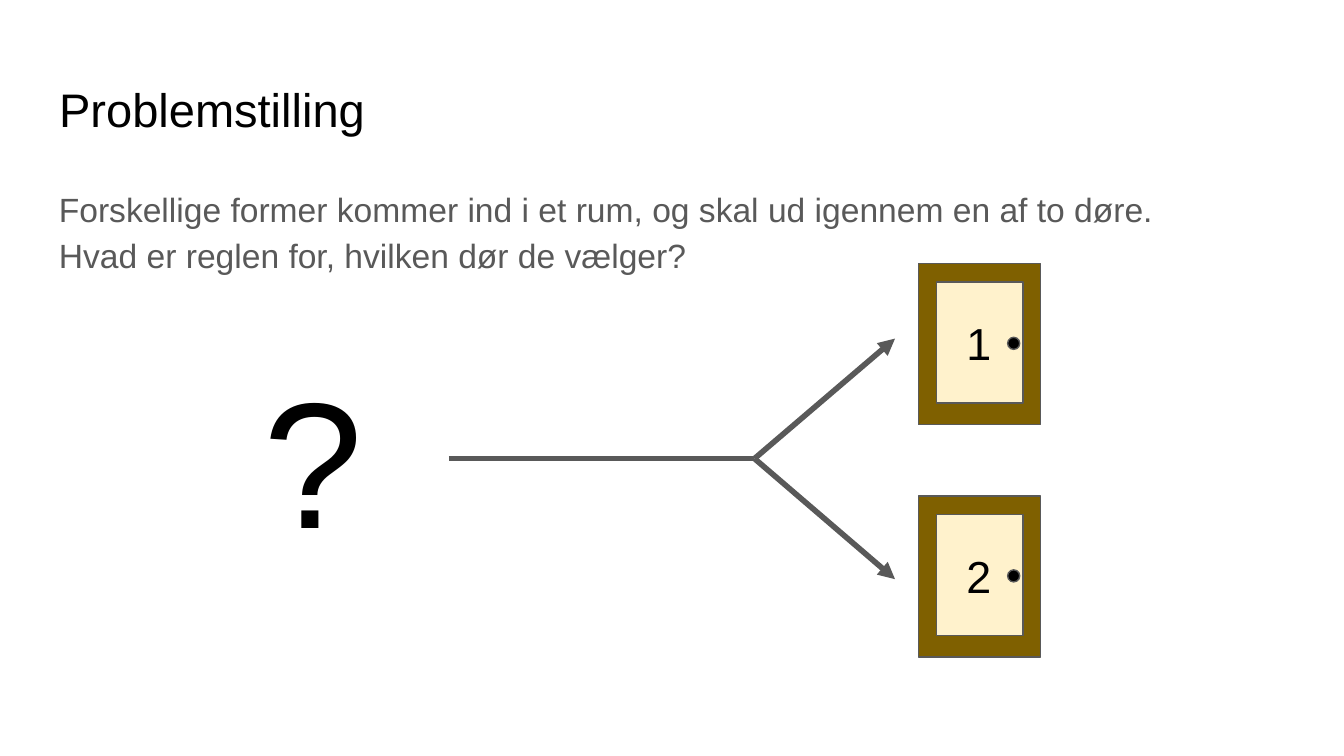
"""Build the problem slide: an unknown shape chooses between two doors."""
from lxml import etree
from pptx import Presentation
from pptx.dml.color import RGBColor
from pptx.enum.shapes import MSO_CONNECTOR, MSO_SHAPE
from pptx.enum.text import MSO_ANCHOR, MSO_AUTO_SIZE
from pptx.oxml.ns import qn
from pptx.util import Pt

STRAIGHT = MSO_CONNECTOR.STRAIGHT
RECTANGLE, OVAL = MSO_SHAPE.RECTANGLE, MSO_SHAPE.OVAL
TOP, BOTTOM = MSO_ANCHOR.TOP, MSO_ANCHOR.BOTTOM
NO_AUTOSIZE = MSO_AUTO_SIZE.NONE

BLACK = RGBColor(0x00, 0x00, 0x00)
GREY = RGBColor(0x59, 0x59, 0x59)
BROWN = RGBColor(0x7F, 0x60, 0x00)
CREAM = RGBColor(0xFF, 0xF2, 0xCC)

INSET = Pt(7.2)
DOOR_LEFT, DOOR_TOP, DOOR_PITCH = 491.9, 141.1, 124.6
FORK = (404.2, 245.7)
PATHS = [
    ((240.5, 245.7), FORK, False),
    (FORK, (479.5, 181.4), True),
    (FORK, (479.5, 310.3), True),
]
BODY_LINES = [
    "Forskellige former kommer ind i et rum, og skal ud igennem en af to døre.",
    "Hvad er reglen for, hvilken dør de vælger?",
]


def points(*lengths):
    return [Pt(length) for length in lengths]


def set_attributes(target, values):
    for name, value in values.items():
        setattr(target, name, value)


def write_text(shape, lines, size, color, anchor=TOP):
    frame = shape.text_frame
    set_attributes(frame, {
        "word_wrap": True, "auto_size": NO_AUTOSIZE, "vertical_anchor": anchor,
        "margin_left": INSET, "margin_top": INSET,
        "margin_right": INSET, "margin_bottom": INSET,
    })
    paragraph = frame.paragraphs[0]
    for index, line in enumerate(lines):
        if index:
            paragraph.add_line_break()
        run = paragraph.add_run()
        run.text = line
        set_attributes(run.font, {"name": "Arial", "size": Pt(size)})
        run.font.color.rgb = color
    return paragraph


def add_title(slide, text):
    title = slide.shapes.title
    left, top, width, height = points(24.5, 35.3, 671, 45.1)
    set_attributes(title, {"left": left, "top": top, "width": width, "height": height})
    paragraph = write_text(title, [text], 25.2, BLACK, BOTTOM)
    set_attributes(paragraph, {"alignment": 1, "line_spacing": 1.0, "space_before": Pt(0)})


def add_text(shapes, box, lines, size, color):
    return write_text(shapes.add_textbox(*points(*box)), lines, size, color)


def add_filled_shape(shapes, kind, box, color):
    shape = shapes.add_shape(kind, *points(*box))
    shape.shadow.inherit = False
    shape.fill.solid()
    shape.fill.fore_color.rgb = color
    shape.line.color.rgb = GREY
    shape.line.width = Pt(0.75)


def add_line(shapes, start, end, has_arrow):
    connector = shapes.add_connector(STRAIGHT, *points(*start, *end))
    connector.line.color.rgb = GREY
    connector.line.width = Pt(3)
    if has_arrow:
        outline = connector.line._get_or_add_ln()
        etree.SubElement(outline, qn("a:tailEnd"), type="triangle")
    etree.SubElement(connector._element.spPr, qn("a:effectLst"))


def add_door(slide, number, top):
    shapes = slide.shapes.add_group_shape().shapes
    add_filled_shape(shapes, RECTANGLE, (DOOR_LEFT, top, 65.5, 86.4), BROWN)
    add_filled_shape(shapes, RECTANGLE, (DOOR_LEFT + 9.8, top + 10.1, 46.3, 64.8), CREAM)
    add_filled_shape(shapes, OVAL, (DOOR_LEFT + 47.9, top + 39.6, 6.5, 6.5), BLACK)
    add_text(shapes, (DOOR_LEFT + 18.7, top + 20.9, 28.8, 43.9), [str(number)], 24, BLACK)


def main():
    presentation = Presentation()
    set_attributes(presentation, {"slide_width": Pt(720), "slide_height": Pt(405)})
    slide = presentation.slides.add_slide(presentation.slide_layouts[5])
    add_title(slide, "Problemstilling")
    body = add_text(slide.shapes, (24.5, 90.7, 671, 269.3), BODY_LINES, 18, GREY)
    set_attributes(body, {"line_spacing": 1.15, "space_after": Pt(12)})
    arrow_shapes = slide.shapes.add_group_shape().shapes
    for start, end, has_arrow in PATHS:
        add_line(arrow_shapes, start, end, has_arrow)
    add_text(slide.shapes, (133.9, 180, 69.8, 131), ["?"], 96, BLACK)
    for number in (2, 1):
        add_door(slide, number, DOOR_TOP + (number - 1) * DOOR_PITCH)
    presentation.save("out.pptx")


if __name__ == "__main__":
    main()
